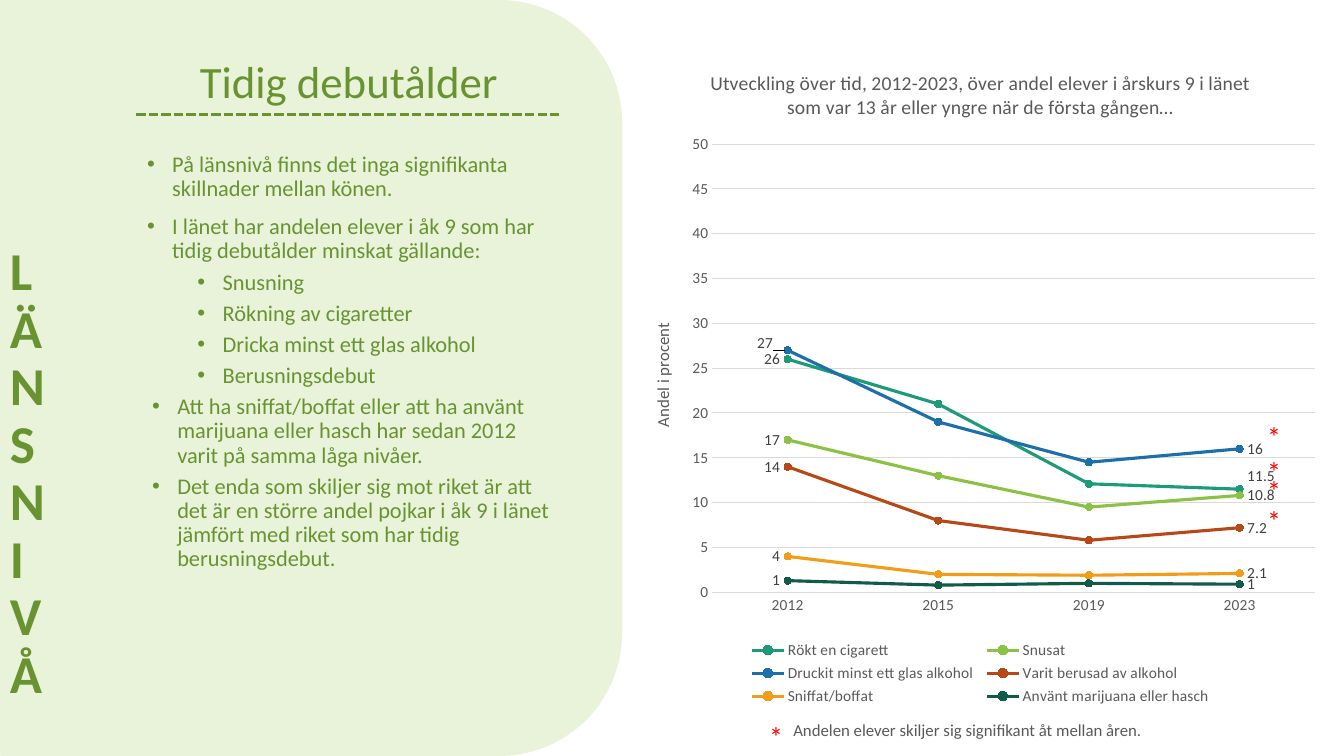
from lxml import etree
from pptx import Presentation
from pptx.chart.data import CategoryChartData
from pptx.dml.color import RGBColor
from pptx.enum.chart import (XL_CHART_TYPE, XL_LABEL_POSITION, XL_LEGEND_POSITION,
                             XL_MARKER_STYLE, XL_TICK_MARK)
from pptx.enum.dml import MSO_LINE
from pptx.enum.shapes import MSO_CONNECTOR, MSO_SHAPE
from pptx.enum.text import MSO_ANCHOR, PP_ALIGN
from pptx.oxml import parse_xml
from pptx.oxml.ns import nsdecls, qn
from pptx.util import Inches, Pt

LINE_CHART = XL_CHART_TYPE.LINE_MARKERS
LEFT, RIGHT = XL_LABEL_POSITION.LEFT, XL_LABEL_POSITION.RIGHT
LEGEND_BOTTOM = XL_LEGEND_POSITION.BOTTOM
CIRCLE = XL_MARKER_STYLE.CIRCLE
NO_TICK = XL_TICK_MARK.NONE
DOTTED = MSO_LINE.SQUARE_DOT
STRAIGHT = MSO_CONNECTOR.STRAIGHT
ROUNDED = MSO_SHAPE.ROUNDED_RECTANGLE
TOP, BOTTOM = MSO_ANCHOR.TOP, MSO_ANCHOR.BOTTOM
CENTER = PP_ALIGN.CENTER

FONT = "Calibri"
GREEN, PALE, GRAY, DARK, GRID, RED = "699331", "E8F3DA", "595959", "404040", "D9D9D9", "FF0000"
WIDTH, HEIGHT = Inches(13.33), Inches(7.5)

# Text, left margin (in), space before (pt)
FINDINGS = [
    ("På länsnivå finns det inga signifikanta skillnader mellan könen.", 0.25, 10),
    ("I länet har andelen elever i åk 9 som har tidig debutålder minskat gällande:", 0.25, 10),
    ("Snusning", 0.75, 5),
    ("Rökning av cigaretter", 0.75, 5),
    ("Dricka minst ett glas alkohol", 0.75, 5),
    ("Berusningsdebut", 0.75, 5),
    ("Att ha sniffat/boffat eller att ha använt marijuana eller hasch har sedan 2012 "
     "varit på samma låga nivåer.", 0.3, 5),
    ("Det enda som skiljer sig mot riket är att det är en större andel pojkar i åk 9 i länet "
     "jämfört med riket som har tidig berusningsdebut.", 0.3, 5),
]
YEARS = ["2012", "2015", "2019", "2023"]
# Name, values, colour, label number format
HABITS = [
    ("Rökt en cigarett", (26, 21, 12.1, 11.5), "1D9A78", "General"),
    ("Snusat", (17, 13, 9.5, 10.8), "8BC145", "General"),
    ("Druckit minst ett glas alkohol", (27, 19, 14.5, 16), "1D6FA9", "General"),
    ("Varit berusad av alkohol", (14, 8, 5.8, 7.2), "B74919", "General"),
    ("Sniffat/boffat", (4, 2, 1.9, 2.1), "F19D19", "General"),
    ("Använt marijuana eller hasch", (1.3, 0.8, 1, 0.9), "115C48", "0"),
]
# Labels moved aside: (habit, year index) -> shift as shares of the chart
LABEL_SHIFTS = {("Druckit minst ett glas alkohol", 0): (-0.01, -0.01),
                ("Rökt en cigarett", 3): (0, -0.02)}
STAR_ROWS = (54.8, 59.47, 62, 66)


def rgb(color):
    return RGBColor.from_string(color)


def across(percent):
    return int(WIDTH * percent / 100)


def down(percent):
    return int(HEIGHT * percent / 100)


def area(left, top, width, height):
    """Box given in percent of the slide."""
    return across(left), down(top), across(width), down(height)


def set_font(font, size, color, bold=False):
    font.name, font.size, font.bold = FONT, Pt(size), bold
    font.color.rgb = rgb(color)


def add_text(slide, box, lines, size, color, anchor=TOP, bold=False, spacing=None):
    holder = slide.shapes.add_textbox(*box)
    frame = holder.text_frame
    frame.word_wrap = True
    frame.vertical_anchor = anchor
    frame.text = "\n".join(lines)
    for paragraph in frame.paragraphs:
        set_font(paragraph.font, size, color, bold)
        paragraph.line_spacing = spacing
    return holder


def add_bullet(paragraph, margin, before):
    paragraph.space_before = Pt(before)
    properties = paragraph._p.get_or_add_pPr()
    properties.set("marL", str(Inches(margin)))
    properties.set("indent", str(Inches(-0.25)))
    properties.append(parse_xml(f'<a:buFont {nsdecls("a")} typeface="Arial"/>'))
    properties.append(parse_xml(f'<a:buChar {nsdecls("a")} char="•"/>'))


def add_panel(slide):
    panel = slide.shapes.add_shape(ROUNDED, *area(-8.55, 0, 54.84, 100))
    panel.shadow.inherit = False
    panel.fill.solid()
    panel.fill.fore_color.rgb = rgb(PALE)
    panel.line.fill.background()


def add_rule(slide, left, right, row):
    rule = slide.shapes.add_connector(STRAIGHT, across(left), down(row), across(right), down(row))
    rule.line.color.rgb = rgb(GREEN)
    rule.line.width = Pt(2.25)
    rule.line.dash_style = DOTTED
    etree.SubElement(rule._element.spPr, qn("a:effectLst"))


def set_layout(parent, position, **values):
    """Manual chart layout, placed as child number `position`."""
    for old in parent.findall(qn("c:layout")):
        parent.remove(old)
    items = "".join(f'<c:{key} val="{value}"/>' for key, value in values.items())
    parent.insert(position, parse_xml(
        f'<c:layout {nsdecls("c")}><c:manualLayout>{items}</c:manualLayout></c:layout>'))


def set_title(owner, text, size):
    frame = owner.text_frame
    frame.text = text
    set_font(frame.paragraphs[0].font, size, GRAY)


def style_axes(chart):
    years, percent = chart.category_axis, chart.value_axis
    for axis in (years, percent):
        axis.major_tick_mark = axis.minor_tick_mark = NO_TICK
        set_font(axis.tick_labels.font, 11, GRAY)
    percent.minimum_scale, percent.maximum_scale, percent.major_unit = 0, 50, 5
    percent.format.line.fill.background()
    set_title(percent.axis_title, "Andel i procent", 12)
    for line in (years.format.line, percent.major_gridlines.format.line):
        line.color.rgb = rgb(GRID)
        line.width = Pt(0.75)


def style_habit(series, color):
    series.smooth = False
    series.format.line.color.rgb = rgb(color)
    series.format.line.width = Pt(2.25)
    series.marker.style, series.marker.size = CIRCLE, 5
    series.marker.format.fill.solid()
    series.marker.format.fill.fore_color.rgb = rgb(color)
    series.marker.format.line.color.rgb = rgb(color)
    for year, side in ((0, LEFT), (3, RIGHT)):
        label = series.points[year].data_label
        set_font(label.font, 11, DARK)
        label.position = side
        if (series.name, year) in LABEL_SHIFTS:
            x, y = LABEL_SHIFTS[series.name, year]
            node = series._element.xpath(f'.//c:dLbl[c:idx/@val="{year}"]')[0]
            set_layout(node, 1, x=x, y=y)
    series.data_labels.show_value = False


def add_habit_chart(slide):
    data = CategoryChartData()
    data.categories = YEARS
    for name, values, _, number_format in HABITS:
        data.add_series(name, values, number_format)
    chart = slide.shapes.add_chart(LINE_CHART, *area(47.04, 6.27, 51.84, 87.6), data).chart
    set_font(chart.font, 11, GRAY)
    set_title(chart.chart_title, "Utveckling över tid, 2012-2023, över andel elever i årskurs 9 "
              "i länet som var 13 år eller yngre när de första gången…", 14)
    style_axes(chart)
    plot = chart.plots[0]
    plot.vary_by_categories = False
    for series, (_, _, color, _) in zip(plot.series, HABITS):
        style_habit(series, color)
    set_layout(chart._chartSpace.chart.plotArea, 0, layoutTarget="inner", xMode="edge",
               yMode="edge", x=0.115, y=0.146, w=0.865, h=0.677)
    chart.has_legend = True
    legend = chart.legend
    legend.position = LEGEND_BOTTOM
    legend.include_in_layout = False
    set_font(legend.font, 11, GRAY)
    set_layout(legend._element, 1, xMode="edge", yMode="edge", x=0.16, y=0.89, w=0.68, h=0.11)


def add_star(slide, left, top):
    add_text(slide, area(left, top, 3.7, 5.4), ["*"], 20, RED)


def main():
    deck = Presentation()
    deck.slide_width, deck.slide_height = WIDTH, HEIGHT
    slide = deck.slides.add_slide(deck.slide_layouts[6])

    # Green panel with the findings
    add_panel(slide)
    add_habit_chart(slide)
    level = add_text(slide, area(0, 6.27, 7.88, 87.6), ["LÄNSNIVÅ"], 38, GREEN,
                     BOTTOM, bold=True, spacing=0.9)
    level.text_frame._txBody.bodyPr.set("vert", "wordArtVert")
    findings = add_text(slide, area(10.2, 19.6, 31.51, 69.33),
                        [text for text, _, _ in FINDINGS], 16, GREEN, spacing=0.9)
    for paragraph, (_, margin, before) in zip(findings.text_frame.paragraphs, FINDINGS):
        add_bullet(paragraph, margin, before)
    heading = add_text(slide, area(9.38, 1.87, 33.16, 13.07), ["Tidig debutålder"], 32, GREEN,
                       BOTTOM, spacing=0.9)
    heading.text_frame.paragraphs[0].alignment = CENTER
    add_rule(slide, 10.13, 41.71, 15.2)

    # Significance stars and their explanation
    for row in STAR_ROWS:
        add_star(slide, 93.55, row)
    add_star(slide, 56.49, 94.53)
    add_text(slide, area(58.29, 94.53, 35.33, 4),
             ["Andelen elever skiljer sig signifikant åt mellan åren."], 12, GRAY)
    deck.save("out.pptx")


if __name__ == "__main__":
    main()
